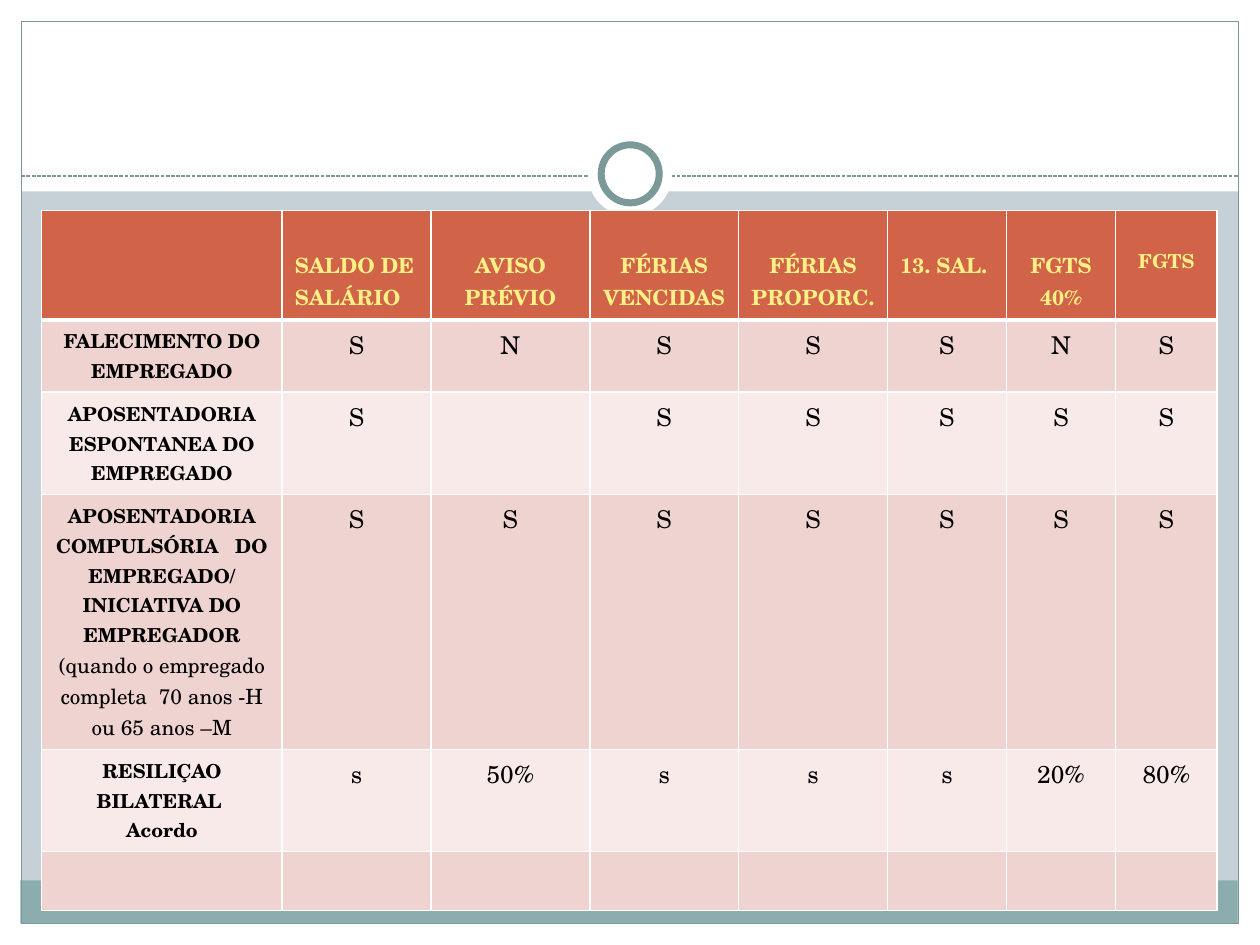
import pptx
import pptx.dml.color
import pptx.enum.dml
import pptx.enum.shapes
import pptx.enum.text
import pptx.oxml
import pptx.oxml.ns
import pptx.util
from lxml import etree

Cm = pptx.util.Cm
Pt = pptx.util.Pt
SHAPE = pptx.enum.shapes.MSO_SHAPE
ALIGN = pptx.enum.text.PP_ALIGN

FONT = "TeX Gyre Schola"
WHITE = "FFFFFF"
TEAL = "7C999A"
BLACK = "000000"
HEADER_FILL = "D16349"
HEADER_TEXT = "FFF185"
BAND_FILLS = ("EED3D0", "F7EAE9")

COLUMN_WIDTHS = (4.85, 3, 3.2, 3, 3, 2.4, 2.2, 2.05)
ROW_HEIGHTS = (2.21, 1.45, 2.06, 5.14, 2.06, 1.19)
HEADERS = ("", "SALDO DE SALÁRIO", "AVISO PRÉVIO", "FÉRIAS VENCIDAS",
           "FÉRIAS PROPORC.", "13. SAL. ", "FGTS 40%", "FGTS")
BODY = (
    ("FALECIMENTO DO EMPREGADO", "S", "N", "S", "S", "S", "N", "S"),
    ("APOSENTADORIA ESPONTANEA DO EMPREGADO", "S", "", "S", "S", "S", "S", "S"),
    ("APOSENTADORIA COMPULSÓRIA   DO EMPREGADO/ INICIATIVA DO EMPREGADOR\n"
     "(quando o empregado completa  70 anos -H ou 65 anos –M",
     "S", "S", "S", "S", "S", "S", "S"),
    ("RESILIÇAO BILATERAL \nAcordo", "s", "50%", "s", "s", "s", "20%", "80%"),
    ("",) * 8,
)


def color(value):
    return pptx.dml.color.RGBColor.from_string(value)


def set_fill(fill, value):
    fill.solid()
    fill.fore_color.rgb = color(value)


def add_shape(slide, kind, box, fill=None, line=None, width=0.75):
    shape = slide.shapes.add_shape(kind, *(Cm(length) for length in box))
    shape.shadow.inherit = False
    if fill:
        set_fill(shape.fill, fill)
    else:
        shape.fill.background()
    if line:
        shape.line.color.rgb = color(line)
        shape.line.width = Pt(width)
    else:
        shape.line.fill.background()


def add_dashed_line(slide, left, right, top):
    connector = slide.shapes.add_connector(
        pptx.enum.shapes.MSO_CONNECTOR.STRAIGHT,
        Cm(left), Cm(top), Cm(right), Cm(top))
    connector.line.color.rgb = color(TEAL)
    connector.line.width = Pt(0.75)
    connector.line.dash_style = pptx.enum.dml.MSO_LINE.SQUARE_DOT
    properties = connector._element.spPr
    etree.SubElement(properties, pptx.oxml.ns.qn("a:effectLst"))


def add_borders(cell, top, bottom):
    properties = cell._tc.get_or_add_tcPr()
    for side, width in (("L", 1), ("R", 1), ("T", top), ("B", bottom)):
        properties.append(pptx.oxml.parse_xml(
            f'<a:ln{side} {pptx.oxml.ns.nsdecls("a")} w="{Pt(width)}">'
            f'<a:solidFill><a:srgbClr val="{WHITE}"/></a:solidFill></a:ln{side}>'))


def format_paragraph(paragraph, size, bold, text_color, alignment=ALIGN.CENTER):
    paragraph.alignment = alignment
    for run in paragraph.runs:
        run.font.name = FONT
        run.font.size = Pt(size)
        run.font.bold = bold
        run.font.color.rgb = color(text_color)


def fill_header(table):
    last = len(HEADERS) - 1
    for column, label in enumerate(HEADERS):
        cell = table.cell(0, column)
        add_borders(cell, 1, 3)
        set_fill(cell.fill, HEADER_FILL)
        if label:
            cell.text_frame.text = label
            cell.margin_top = Cm(0.72 if column == last else 0.77)
            format_paragraph(cell.text_frame.paragraphs[0],
                             11 if column == last else 12, True, HEADER_TEXT,
                             ALIGN.LEFT if column == 1 else ALIGN.CENTER)


def fill_body(table):
    for row, values in enumerate(BODY, start=1):
        for column, value in enumerate(values):
            cell = table.cell(row, column)
            add_borders(cell, 3 if row == 1 else 1, 1)
            set_fill(cell.fill, BAND_FILLS[(row - 1) % 2])
            if not value:
                continue
            cell.text_frame.text = value
            for paragraph in cell.text_frame.paragraphs:
                if column:
                    format_paragraph(paragraph, 14, False, BLACK)
                elif paragraph.text.startswith("("):
                    format_paragraph(paragraph, 12, False, BLACK)
                else:
                    format_paragraph(paragraph, 11, True, BLACK)


def add_severance_table(slide):
    table = slide.shapes.add_table(
        len(ROW_HEIGHTS), len(COLUMN_WIDTHS), Cm(0.84), Cm(4.24),
        Cm(sum(COLUMN_WIDTHS)), Cm(sum(ROW_HEIGHTS))).table
    table.horz_banding = False
    for column, width in zip(table.columns, COLUMN_WIDTHS):
        column.width = Cm(width)
    for row, height in zip(table.rows, ROW_HEIGHTS):
        row.height = Cm(height)
    fill_header(table)
    fill_body(table)


def add_frame(slide):
    margins = ((0, 18.62, 25.4, 0.43), (0, 0, 25.4, 3.86),
               (0, 0, 0.43, 19.05), (24.97, 0, 0.43, 19.05))
    for box in margins:
        add_shape(slide, SHAPE.RECTANGLE, box, WHITE)
    add_shape(slide, SHAPE.RECTANGLE, (0.41, 17.75, 24.54, 0.87), "8CADAE")
    add_shape(slide, SHAPE.RECTANGLE, (0.43, 0.43, 24.54, 18.19), line=TEAL)
    add_dashed_line(slide, 0.43, 24.97, 3.55)
    add_shape(slide, SHAPE.OVAL, (11.85, 2.66, 1.7, 1.7), WHITE)
    add_shape(slide, SHAPE.OVAL, (12.12, 2.92, 1.17, 1.17), WHITE, TEAL, 4)


def main():
    presentation = pptx.Presentation()
    presentation.slide_width = Cm(25.4)
    presentation.slide_height = Cm(19.05)
    slide = presentation.slides.add_slide(presentation.slide_layouts[6])
    set_fill(slide.background.fill, "C5D1D7")
    add_frame(slide)
    add_severance_table(slide)
    presentation.save("out.pptx")


if __name__ == "__main__":
    main()
